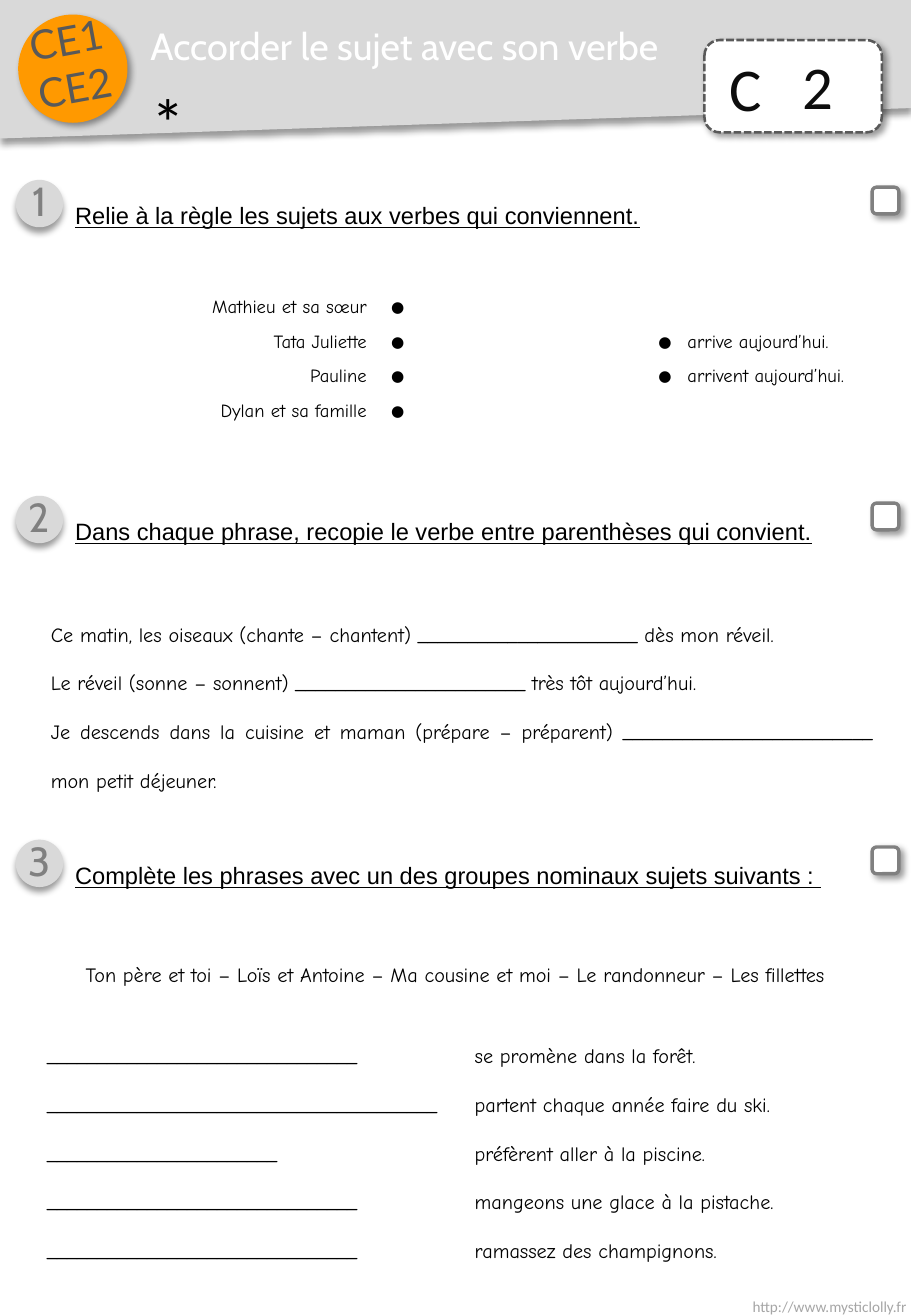
from dataclasses import dataclass

from lxml.etree import SubElement
from pptx import Presentation
from pptx.dml.color import RGBColor
from pptx.enum.dml import MSO_LINE
from pptx.enum.shapes import MSO_SHAPE as Preset
from pptx.enum.text import MSO_ANCHOR as Anchor, PP_ALIGN as Align
from pptx.oxml.ns import qn
from pptx.util import Pt

PX = 9144


@dataclass(frozen=True)
class Theme:
    white: str = "FFFFFF"
    black: str = "000000"
    ink: str = "0D0D0D"
    dark: str = "595959"
    gray: str = "808080"
    pale: str = "A6A6A6"
    band: str = "D9D9D9"
    orange: str = "FF9900"
    title: tuple = ("Cabin", 22.4)
    number: tuple = ("Cabin", 24)
    level: tuple = ("Lato", 24)
    code: tuple = ("Calibri", 36)
    star: tuple = ("Calibri", 40)
    footer: tuple = ("Calibri", 9)
    heading: tuple = ("Arial", 14)
    body: tuple = ("Comic Neue", 12)
    match: tuple = ("Comic Neue", 11)
    dot: tuple = ("Comic Neue", 9)


class Worksheet:
    def __init__(self, slide, theme):
        self.shapes = slide.shapes
        self.layer = slide.shapes
        self.theme = theme

    def add_words(self, paragraph, words, style, color, underline=None):
        run = paragraph.add_run()
        run.text = words
        font = run.font
        font.name, size = style
        font.size = Pt(size)
        font.color.rgb = RGBColor.from_string(color)
        font.underline = underline

    def text(self, box, lines, style, color, align=Align.LEFT, spacing=None,
             underline=None, anchor=Anchor.TOP, rotation=0):
        holder = self.layer.add_textbox(*(n * PX for n in box))
        holder.rotation = rotation
        frame = holder.text_frame
        frame.word_wrap = True
        frame.vertical_anchor = anchor
        for index, words in enumerate(lines):
            paragraph = frame.add_paragraph() if index else frame.paragraphs[0]
            paragraph.alignment = align
            paragraph.line_spacing = spacing
            self.add_words(paragraph, words, style, color, underline)

    def finish(self, shape, fill, line, angle):
        shape.shadow.inherit = False
        shape.fill.solid()
        shape.fill.fore_color.rgb = RGBColor.from_string(fill)
        if line:
            color, width = line
            shape.line.color.rgb = RGBColor.from_string(color)
            shape.line.width = Pt(width)
        else:
            shape.line.fill.background()
        effects = shape._element.spPr.find(qn("a:effectLst"))
        shadow = SubElement(effects, qn("a:outerShdw"), blurRad=str(Pt(4)),
                            dist=str(Pt(3)), dir=str(angle * 60000),
                            algn="t", rotWithShape="0")
        tint = SubElement(shadow, qn("a:srgbClr"), val=self.theme.black)
        SubElement(tint, qn("a:alpha"), val="40000")
        return shape

    def shape(self, preset, box, fill, line=None, angle=45):
        shape = self.layer.add_shape(preset, *(n * PX for n in box))
        return self.finish(shape, fill, line, angle)

    def banner(self, corners, fill):
        outline = self.layer.build_freeform(*corners[0], scale=PX)
        outline.add_line_segments(corners[1:], close=True)
        self.finish(outline.convert_to_shape(), fill, None, 90)

    def exercise(self, number, top, instruction):
        t = self.theme
        self.layer = self.shapes.add_group_shape().shapes
        self.shape(Preset.OVAL, (13, top, 39, 39), t.band, angle=90)
        self.text((13, top - 8, 39, 50), [str(number)], t.number, t.gray, Align.CENTER)
        self.text((52, top + 1, 677, 45), [instruction], t.heading, t.black,
                  spacing=1.5, underline=True)
        self.shape(Preset.ROUNDED_RECTANGLE, (718, top + 6, 22, 22), t.white, (t.gray, 2))
        self.layer = self.shapes

    def matching(self, left, top, widths, row_height, rows):
        t = self.theme
        box = (left, top, sum(widths), row_height * len(rows))
        table = self.layer.add_table(len(rows), len(widths), *(n * PX for n in box)).table
        table.first_row = table.horz_banding = False
        for column, width in zip(table.columns, widths):
            column.width = width * PX
        for row, entries in zip(table.rows, rows):
            row.height = row_height * PX
            for index, (cell, words) in enumerate(zip(row.cells, entries)):
                cell.fill.solid()
                cell.fill.fore_color.rgb = RGBColor.from_string(t.white)
                cell.vertical_anchor = Anchor.MIDDLE
                paragraph = cell.text_frame.paragraphs[0]
                paragraph.alignment = Align.LEFT if index % 2 else Align.RIGHT
                if words:
                    self.add_words(paragraph, words, t.dot if words == "●" else t.match, t.black)
                else:
                    paragraph._p.get_or_add_endParaRPr().set("sz", "900")


def blank(length):
    return "_" * length


def main():
    deck = Presentation()
    deck.slide_width, deck.slide_height = 750 * PX, 1083 * PX
    t = Theme()
    sheet = Worksheet(deck.slides.add_slide(deck.slide_layouts[6]), t)

    sheet.text((583, 1063, 173, 25), ["http://www.mysticlolly.fr"], t.footer, t.pale, Align.RIGHT)
    sheet.banner([(0, 0), (750, 0), (750, 89), (0, 114)], t.band)
    code_card = sheet.shape(Preset.ROUNDED_RECTANGLE, (580, 33, 146, 76), t.white, (t.dark, 1.5))
    code_card.line.dash_style = MSO_LINE.SQUARE_DOT
    sheet.text((591, 37, 60, 71), ["C"], t.code, t.ink)
    sheet.shape(Preset.OVAL, (15, 12, 90, 89), t.orange)
    sheet.text((13, 7, 90, 91), ["CE1", "CE2"], t.level, t.dark, Align.CENTER, rotation=349.6)
    sheet.text((114, 4, 466, 67), ["Accorder le sujet avec son verbe"], t.title, t.white,
               anchor=Anchor.MIDDLE)
    sheet.text((651, 35, 91, 76), ["2"], t.code, t.ink)
    sheet.text((115, 61, 126, 38), ["*"], t.star, t.black)

    sheet.exercise(1, 148, "Relie à la règle les sujets aux verbes qui conviennent.")
    sheet.matching(92, 239, (220, 220, 24, 173), 28, [
        ("Mathieu et sa sœur", "●", "", ""),
        ("Tata Juliette", "●", "●", "arrive aujourd’hui."),
        ("Pauline", "●", "●", "arrivent aujourd’hui."),
        ("Dylan et sa famille", "●", "", ""),
    ])

    sheet.exercise(2, 408, "Dans chaque phrase, recopie le verbe entre parenthèses qui convient.")
    sheet.text((32, 487, 697, 172), [
        f"Ce matin, les oiseaux (chante – chantent) {blank(22)} dès mon réveil.",
        f"Le réveil (sonne – sonnent) {blank(23)} très tôt aujourd’hui.",
        f"Je descends dans la cuisine et maman (prépare – préparent) {blank(25)} mon petit déjeuner.",
    ], t.body, t.black, Align.JUSTIFY, 2.0)

    sheet.exercise(3, 691, "Complète les phrases avec un des groupes nominaux sujets suivants : ")
    sheet.text((381, 834, 348, 212), [
        "se promène dans la forêt.",
        "partent chaque année faire du ski.",
        "préfèrent aller à la piscine.",
        "mangeons une glace à la pistache.",
        "ramassez des champignons.",
    ], t.body, t.black, Align.JUSTIFY, 2.0)
    sheet.text((29, 834, 348, 212), [blank(n) for n in (31, 62, 31, 31)],
               t.body, t.black, Align.JUSTIFY, 2.0)
    sheet.text((0, 787, 750, 30), [
        "Ton père et toi – Loïs et Antoine – Ma cousine et moi – Le randonneur – Les fillettes",
    ], t.body, t.black, Align.CENTER)

    deck.save("out.pptx")


if __name__ == "__main__":
    main()
